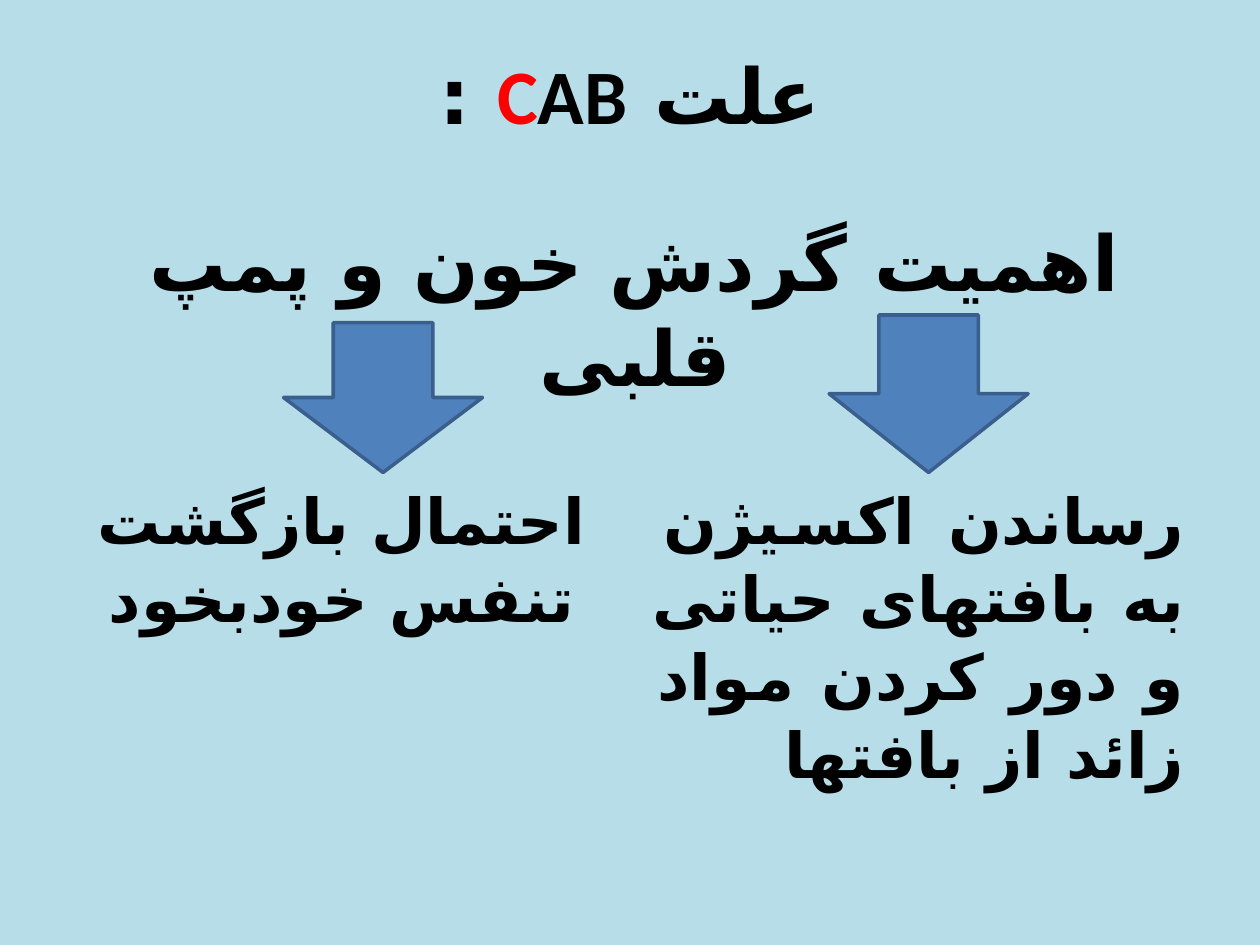
from typing import NamedTuple

from lxml import etree
from pptx import Presentation
from pptx.dml.color import RGBColor
from pptx.enum.shapes import MSO_SHAPE
from pptx.enum.text import MSO_ANCHOR, MSO_AUTO_SIZE, PP_ALIGN
from pptx.oxml.ns import qn
from pptx.util import Inches, Pt

DOWN_ARROW = MSO_SHAPE.DOWN_ARROW
CENTER, JUSTIFY = PP_ALIGN.CENTER, PP_ALIGN.JUSTIFY
TOP, MIDDLE = MSO_ANCHOR.TOP, MSO_ANCHOR.MIDDLE
FIXED, GROW = MSO_AUTO_SIZE.NONE, MSO_AUTO_SIZE.SHAPE_TO_FIT_TEXT

PALE_BLUE = RGBColor(0xB7, 0xDE, 0xE8)
BLUE = RGBColor(0x4F, 0x81, 0xBD)
DARK_BLUE = RGBColor(0x3A, 0x5F, 0x8C)
BLACK = RGBColor(0, 0, 0)
RED = RGBColor(0xFF, 0, 0)

FONT = "Calibri"
PERSIAN_FONT = "DejaVu Sans"  # Calibri has no Persian letters
HEADING_SIZE, BODY_SIZE = 44, 36.1
LINE_SPACING = 1.03
COLUMN_TOP = 3.75
ARROW_WIDTH = 1.58


class Area(NamedTuple):
    left: float
    top: float
    width: float
    height: float


class Span(NamedTuple):
    text: str
    color: RGBColor = BLACK


class TextBlock(NamedTuple):
    area: Area
    spans: list[Span]
    size: float = HEADING_SIZE
    align: PP_ALIGN = CENTER
    anchor: MSO_ANCHOR = TOP
    auto_size: MSO_AUTO_SIZE = FIXED
    space_before: float = 0


def draw_text(page, block: TextBlock) -> None:
    """Add a right-to-left text box of bold spans."""
    box = page.shapes.add_textbox(*map(Inches, block.area))
    frame = box.text_frame
    frame.word_wrap = True
    frame.auto_size = block.auto_size
    frame.vertical_anchor = block.anchor
    para = frame.paragraphs[0]
    para.alignment = block.align
    para.line_spacing = LINE_SPACING
    para.space_before = Pt(block.space_before)
    para._p.get_or_add_pPr().set("rtl", "1")
    for span in block.spans:
        run = para.add_run()
        run.text = span.text
        run.font.name = FONT
        run.font.size = Pt(block.size)
        run.font.bold = True
        run.font.color.rgb = span.color
        properties = run._r.get_or_add_rPr()
        properties.set("lang", "fa-IR")
        etree.SubElement(properties, qn("a:cs"), typeface=PERSIAN_FONT)


def draw_arrow(page, left: float, top: float) -> None:
    """Add a block arrow that ends at the top of the columns."""
    area = Area(left, top, ARROW_WIDTH, COLUMN_TOP - top)
    arrow = page.shapes.add_shape(DOWN_ARROW, *map(Inches, area))
    arrow.shadow.inherit = False
    arrow.fill.solid()
    arrow.fill.fore_color.rgb = BLUE
    arrow.line.color.rgb = DARK_BLUE
    arrow.line.width = Pt(2)


def column(left: float, text: str, align: PP_ALIGN) -> TextBlock:
    return TextBlock(Area(left, COLUMN_TOP, 4.42, 1.92), [Span(text)],
                     size=BODY_SIZE, align=align, space_before=0.2 * BODY_SIZE)


TITLE = TextBlock(Area(0.5, 0.3, 9, 0.87),
                  [Span("علت "), Span("C", RED), Span("AB :")], anchor=MIDDLE)
STATEMENT = TextBlock(Area(0.5, 1.63, 9.08, 0.84),
                      [Span("اهمیت گردش خون و پمپ قلبی")], auto_size=GROW)
COLUMNS = [
    column(0.5, "احتمال بازگشت تنفس خودبخود", CENTER),
    column(5.08, "رساندن اکسیژن به بافتهای حیاتی و دور کردن مواد زائد از بافتها",
           JUSTIFY),
]


def main() -> None:
    deck = Presentation()
    deck.slide_width, deck.slide_height = Inches(10), Inches(7.5)
    page = deck.slides.add_slide(deck.slide_layouts[6])
    page.background.fill.solid()
    page.background.fill.fore_color.rgb = PALE_BLUE

    # Statement, with the right arrow over it
    draw_text(page, STATEMENT)
    draw_arrow(page, 6.58, 2.5)

    # Title and the two reasons
    for block in [TITLE, *COLUMNS]:
        draw_text(page, block)

    # Left arrow
    draw_arrow(page, 2.25, 2.56)

    deck.save("out.pptx")


if __name__ == "__main__":
    main()
